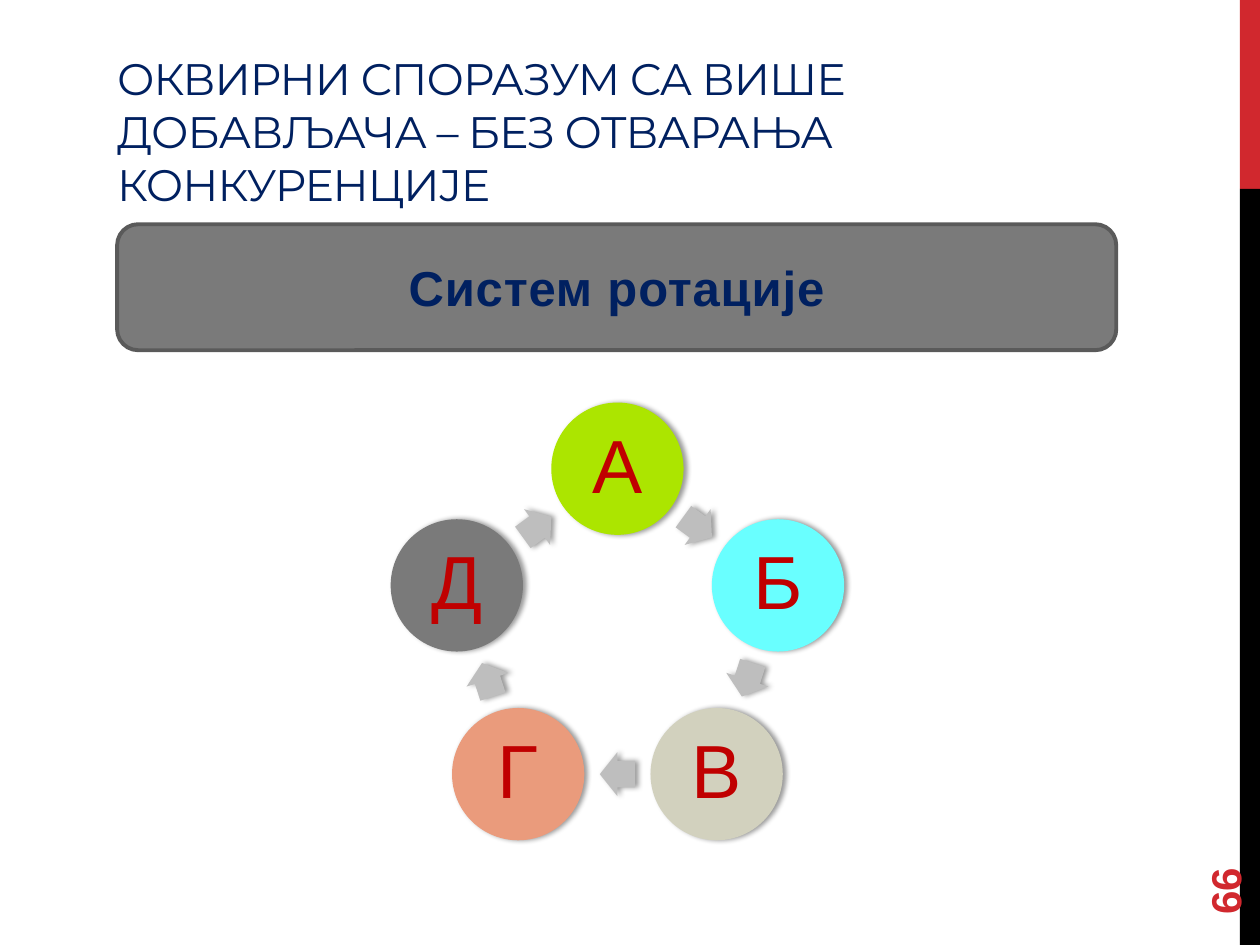
from math import cos, radians, sin

from lxml.etree import SubElement
from pptx import Presentation
from pptx.dml.color import RGBColor
from pptx.enum.shapes import MSO_SHAPE
from pptx.enum.text import MSO_ANCHOR, MSO_AUTO_SIZE, PP_ALIGN
from pptx.oxml.ns import qn
from pptx.util import Inches, Pt

COLORS = {
    "red": "D1282E", "black": "000000", "navy": "002060", "letter": "C00000",
    "arrow": "BEBEBE", "banner": "7A7A7A", "banner_line": "5A5A5A",
}
SUPPLIERS = {"A": "ACE500", "Б": "69FFFF", "В": "D2D1BE", "Г": "EA9B7C", "Д": "7A7A7A"}


def add_filled_shape(shapes, kind, box, color, shadow=False):
    """Add a borderless shape; box is left, top, width, height in inches."""
    shape = shapes.add_shape(kind, *[Inches(length) for length in box])
    shape.fill.solid()
    shape.fill.fore_color.rgb = RGBColor.from_string(color)
    shape.line.fill.background()
    shape.shadow.inherit = False
    if shadow:
        effects = shape.element.spPr.find(qn("a:effectLst"))
        outer = SubElement(effects, qn("a:outerShdw"), blurRad=str(Pt(3.1)),
                           dist=str(Pt(1.8)), dir="0", algn="ctr", rotWithShape="0")
        tint = SubElement(outer, qn("a:srgbClr"), val=COLORS["black"])
        SubElement(tint, qn("a:alpha"), val="40000")
    return shape


def write_text(shape, text, color, align, anchor, letter_spacing=0, **font_values):
    """Write one formatted paragraph; letter_spacing is in points."""
    frame = shape.text_frame
    frame.word_wrap = True
    frame.auto_size = MSO_AUTO_SIZE.NONE
    frame.vertical_anchor = anchor
    paragraph = frame.paragraphs[0]
    paragraph.alignment = align
    run = paragraph.add_run()
    run.text = text
    for name, value in font_values.items():
        setattr(run.font, name, value)
    run.font.color.rgb = RGBColor.from_string(color)
    if letter_spacing:
        run.font._element.set("spc", str(round(letter_spacing * 100)))
    return paragraph


presentation = Presentation()
presentation.slide_width = Inches(10)
presentation.slide_height = Inches(7.5)
slide = presentation.slides.add_slide(presentation.slide_layouts[5])

# Side stripe: the top fifth is red, the rest black
stripe_left, stripe_width, red_height = 9.84, 0.16, 1.5
add_filled_shape(slide.shapes, MSO_SHAPE.RECTANGLE,
                 (stripe_left, 0, stripe_width, red_height), COLORS["red"])
add_filled_shape(slide.shapes, MSO_SHAPE.RECTANGLE,
                 (stripe_left, red_height, stripe_width, 7.5 - red_height), COLORS["black"])

# Title
title = slide.shapes.title
title.left, title.top, title.width, title.height = [
    Inches(length) for length in (0.83, 0.36, 8.14, 1.17)]
write_text(title, "ОКВИРНИ СПОРАЗУМ СА ВИШЕ ДОБАВЉАЧА – БЕЗ ОТВАРАЊА КОНКУРЕНЦИЈЕ",
           COLORS["navy"], PP_ALIGN.LEFT, MSO_ANCHOR.TOP, letter_spacing=-0.6,
           name="Montserrat", size=Pt(25.2))

# Slide number, reading upwards
number = slide.shapes.add_textbox(Inches(9), Inches(6.44), Inches(1.44), Inches(0.4))
number.rotation = 270
write_text(number, "66", COLORS["red"], PP_ALIGN.LEFT, MSO_ANCHOR.MIDDLE,
           name="Arial", size=Pt(24), bold=True)

# Rotation cycle: circles on the corners of a pentagon, arrows halfway between
cycle = slide.shapes.add_group_shape()
center_x, center_y = 4.9, 5.06
diameter, circle_radius = 1.05, 1.34
arrow_width, arrow_height = 0.28, 0.35
step = 360 / len(SUPPLIERS)
arrow_radius = circle_radius * cos(radians(step / 2))

for index, (letter, color) in enumerate(SUPPLIERS.items()):
    angle = index * step
    left = center_x + circle_radius * sin(radians(angle)) - diameter / 2
    top = center_y - circle_radius * cos(radians(angle)) - diameter / 2
    circle = add_filled_shape(cycle.shapes, MSO_SHAPE.OVAL,
                              (left, top, diameter, diameter), color, shadow=True)
    for side in ("left", "top", "right", "bottom"):
        setattr(circle.text_frame, f"margin_{side}", Inches(0.06))
    paragraph = write_text(circle, letter, COLORS["letter"], PP_ALIGN.CENTER,
                           MSO_ANCHOR.MIDDLE, name="Arial", size=Pt(43))
    paragraph.line_spacing = 0.9

    angle += step / 2
    left = center_x + arrow_radius * sin(radians(angle)) - arrow_width / 2
    top = center_y - arrow_radius * cos(radians(angle)) - arrow_height / 2
    arrow = add_filled_shape(cycle.shapes, MSO_SHAPE.RIGHT_ARROW,
                             (left, top, arrow_width, arrow_height),
                             COLORS["arrow"], shadow=True)
    arrow.adjustments[0] = 0.6
    arrow.rotation = angle

# Banner
banner = add_filled_shape(slide.shapes, MSO_SHAPE.ROUNDED_RECTANGLE,
                          (0.93, 1.78, 7.93, 1), COLORS["banner"])
banner.line.color.rgb = RGBColor.from_string(COLORS["banner_line"])
banner.line.width = Pt(2.25)
write_text(banner, "Систем ротације", COLORS["navy"], PP_ALIGN.CENTER, MSO_ANCHOR.MIDDLE,
           letter_spacing=0.5, name="Arial", size=Pt(28), bold=True)

presentation.save("out.pptx")
